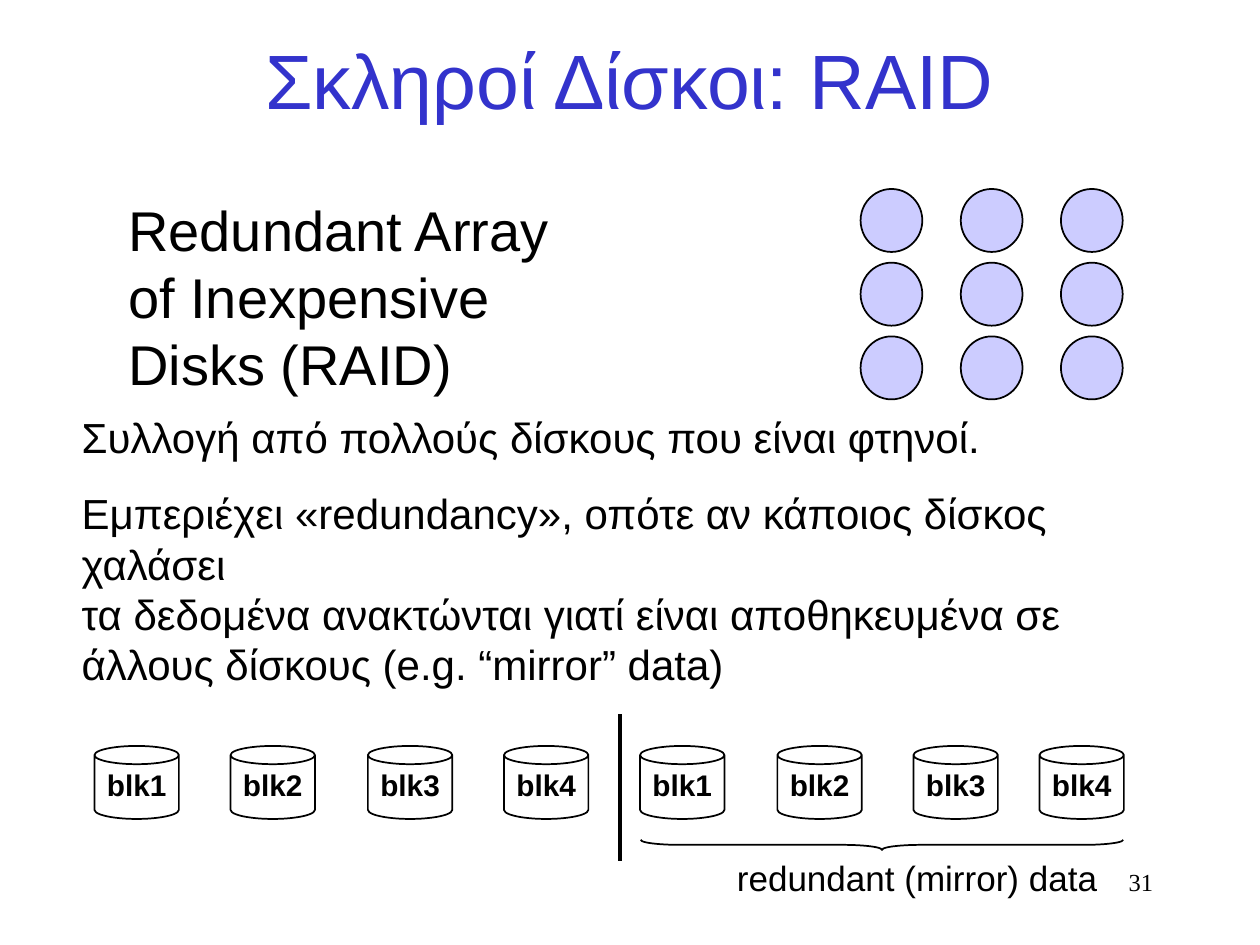
from dataclasses import dataclass
from itertools import product

from lxml.etree import SubElement
from pptx import Presentation
from pptx.dml.color import RGBColor
from pptx.enum.shapes import MSO_CONNECTOR, MSO_SHAPE
from pptx.enum.text import MSO_ANCHOR, MSO_AUTO_SIZE, PP_ALIGN
from pptx.oxml.ns import qn
from pptx.util import Inches, Pt

BLACK, TITLE_BLUE, DISK_LILAC = "000000", "3333CC", "CCCCFF"


@dataclass
class Box:
    left: float
    top: float
    width: float
    height: float

    def lengths(self) -> list:
        return [Inches(v) for v in (self.left, self.top, self.width, self.height)]


@dataclass
class Style:
    size: float
    color: str = BLACK
    bold: bool = False
    font: str = "Arial"
    align: PP_ALIGN = PP_ALIGN.LEFT
    wrap: bool = True
    anchor: MSO_ANCHOR = MSO_ANCHOR.TOP
    line_spacing: float = 1.0
    inset: tuple = (0.1, 0.05)


def rgb(hex_color: str) -> RGBColor:
    return RGBColor.from_string(hex_color)


def add_text(slide, box: Box, text: str, style: Style):
    frame = slide.shapes.add_textbox(*box.lengths()).text_frame
    frame.word_wrap = style.wrap
    if not style.wrap:
        frame.auto_size = MSO_AUTO_SIZE.SHAPE_TO_FIT_TEXT
    frame.vertical_anchor = style.anchor
    across, down = style.inset
    frame.margin_left = frame.margin_right = Inches(across)
    frame.margin_top = frame.margin_bottom = Inches(down)
    frame.text = text
    for paragraph in frame.paragraphs:
        paragraph.alignment = style.align
        paragraph.line_spacing = style.line_spacing
        for run in paragraph.runs:
            run.font.size = Pt(style.size)
            run.font.name = style.font
            run.font.bold = style.bold
            run.font.color.rgb = rgb(style.color)
    return frame


def add_outline(slide, kind: MSO_SHAPE, box: Box, fill: str = ""):
    shape = slide.shapes.add_shape(kind, *box.lengths())
    shape.shadow.inherit = False
    if fill:
        shape.fill.solid()
        shape.fill.fore_color.rgb = rgb(fill)
    else:
        shape.fill.background()
    shape.line.color.rgb = rgb(BLACK)
    shape.line.width = Pt(1)
    return shape


def add_block(slide, left: float, label: str) -> None:
    can = add_outline(slide, MSO_SHAPE.CAN, Box(left, 5.92, 0.67, 0.58))
    can.adjustments[0] = 0.25
    style = Style(17, bold=True, align=PP_ALIGN.CENTER, wrap=False,
                  line_spacing=0.85, inset=(0.04, 0.03))
    add_text(slide, Box(left + 0.03, 6.1, 0.61, 0.3), label, style)


def main() -> None:
    deck = Presentation()
    deck.slide_width, deck.slide_height = Inches(10), Inches(7.5)
    slide = deck.slides.add_slide(deck.slide_layouts[6])

    # Title and page number
    add_text(slide, Box(0.75, 0, 8.5, 1.25), "Σκληροί Δίσκοι: RAID",
             Style(44, TITLE_BLUE, align=PP_ALIGN.CENTER, anchor=MSO_ANCHOR.MIDDLE))
    add_text(slide, Box(7.17, 6.83, 2.08, 0.5), "31",
             Style(14, font="Times New Roman", align=PP_ALIGN.RIGHT))

    # Array of disks
    for row, column in product(range(3), repeat=2):
        disk = Box(6.83 + column * 0.795, 1.5 + row * 0.585, 0.49, 0.5)
        add_outline(slide, MSO_SHAPE.OVAL, disk, DISK_LILAC)

    # Definition and explanation
    add_text(slide, Box(0.92, 1.5, 3.77, 1.72),
             "Redundant Array of Inexpensive Disks (RAID)", Style(32))
    explanation = add_text(
        slide, Box(0.55, 3.22, 9, 2.32),
        "Συλλογή από πολλούς δίσκους που είναι φτηνοί.\n"
        "Εμπεριέχει «redundancy», οπότε αν κάποιος δίσκος χαλάσει\n"
        "τα δεδομένα ανακτώνται γιατί είναι αποθηκευμένα σε "
        "άλλους δίσκους (e.g. “mirror” data)", Style(24))
    explanation.paragraphs[1].space_before = Pt(14.5)

    # Data blocks and their mirrors, either side of a divider
    divider = slide.shapes.add_connector(
        MSO_CONNECTOR.STRAIGHT, Inches(4.92), Inches(5.67), Inches(4.92), Inches(6.83))
    divider.line.color.rgb = rgb(BLACK)
    divider.line.width = Pt(2.25)
    SubElement(divider._element.spPr, qn("a:effectLst"))

    block_lefts = [0.75, 1.83, 2.92, 4, 5.08, 6.17, 7.25, 8.25]
    for index, left in enumerate(block_lefts):
        add_block(slide, left, f"blk{index % 4 + 1}")

    # Brace under the mirrors
    brace = add_outline(slide, MSO_SHAPE.LEFT_BRACE, Box(6.96, 4.79, 0.08, 3.83))
    brace.rotation = 270
    brace.adjustments[0] = 3.83
    brace.adjustments[1] = 0.5
    add_text(slide, Box(5.75, 6.75, 3.08, 0.44), "redundant (mirror) data",
             Style(20, wrap=False))

    deck.save("out.pptx")


if __name__ == "__main__":
    main()
